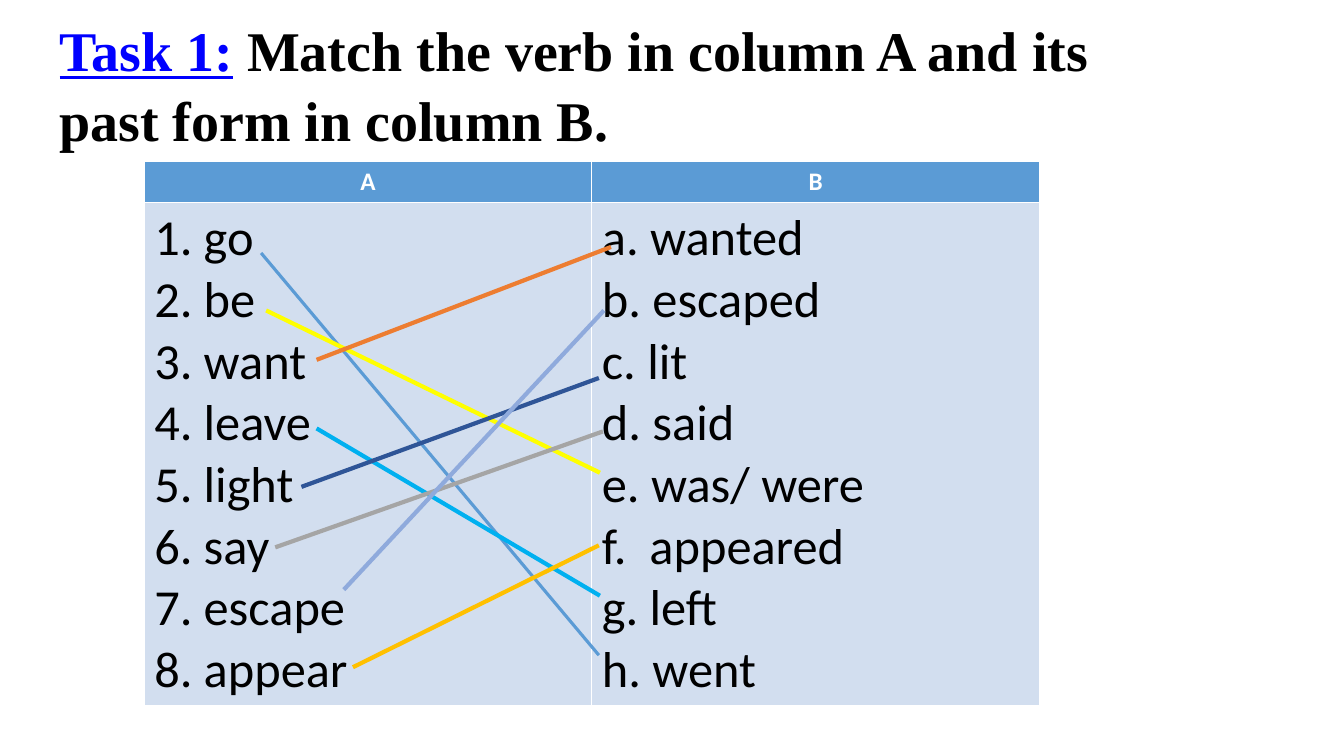
import pptx
import pptx.util
import pptx.dml.color
import pptx.enum.shapes
import pptx.enum.text
import pptx.oxml
import pptx.oxml.ns

SCALE = 9144  # EMU per px, at 100 px to the inch
HEAD, BODY = 41, 490
VERBS = ["go", "be", "want", "leave", "light", "say", "escape", "appear"]
PASTS = ["a. wanted", "b. escaped", "c. lit", "d. said", "e. was/ were",
         "f.  appeared", "g. left", "h. went"]
LINKS = [
    (259, 251, 594, 650, "5B9BD5", 2.25),
    (264, 308, 595, 469, "FFFF00", 3),
    (314, 357, 606, 245, "ED7D31", 3),
    (314, 425, 595, 591, "00B0F0", 3),
    (299, 483, 594, 375, "2F5597", 3),
    (273, 543, 598, 428, "A5A5A5", 3),
    (341, 585, 599, 308, "8FAADC", 3),
    (350, 662, 594, 541, "FFC000", 3),
]
TASK = {"name": "Times New Roman", "size": pptx.util.Pt(40), "bold": True}
LABEL = {"name": "Calibri", "size": pptx.util.Pt(18), "bold": True}
ENTRY = {"name": "Calibri", "size": pptx.util.Pt(36), "bold": False}


def px(count):
    return pptx.util.Emu(count * SCALE)


def tint(code):
    return pptx.dml.color.RGBColor.from_string(code)


def style(font, form, code):
    for key, value in form.items():
        setattr(font, key, value)
    font.color.rgb = tint(code)


def place(shape, left, top, width, height):
    box = {"left": left, "top": top, "width": width, "height": height}
    for key, value in box.items():
        setattr(shape, key, px(value))


def number(para, indent):
    """Give the paragraph an automatic number with a hanging indent."""
    props = para._p.get_or_add_pPr()
    props.set("marL", str(px(indent)))
    props.set("indent", str(-px(indent)))
    mark = pptx.oxml.parse_xml(
        '<a:buAutoNum %s type="arabicPeriod"/>' % pptx.oxml.ns.nsdecls("a"))
    props.append(mark)


def add_title(slide):
    title = slide.shapes.title
    place(title, 49, 7, 1100, 145)
    frame = title.text_frame
    frame.word_wrap = True
    frame.vertical_anchor = pptx.enum.text.MSO_ANCHOR.TOP
    para = frame.paragraphs[0]
    para.alignment = pptx.enum.text.PP_ALIGN.LEFT
    para.line_spacing = 1.05
    parts = [("Task 1:", "0000FF", True),
             (" Match the verb in column A and its past form in column B.",
              "000000", False)]
    for text, code, under in parts:
        run = para.add_run()
        run.text = text
        style(run.font, {**TASK, "underline": under}, code)


def fill_cell(cell, lines, back, form, code, align=None, indent=0):
    cell.fill.solid()
    cell.fill.fore_color.rgb = tint(back)
    cell.text = "\n".join(lines)
    for para in cell.text_frame.paragraphs:
        para.alignment = align
        if indent:
            number(para, indent)
        style(para.runs[0].font, form, code)


def add_grid(slide):
    frame = slide.shapes.add_table(
        2, 2, px(143), px(160), px(888), px(HEAD + BODY))
    grid = frame.table
    grid.horz_banding = False
    for row, height in zip(grid.rows, (HEAD, BODY)):
        row.height = px(height)
    center = pptx.enum.text.PP_ALIGN.CENTER
    columns = [("A", VERBS, 49), ("B", PASTS, 0)]
    for col, (label, words, indent) in enumerate(columns):
        fill_cell(grid.cell(0, col), [label], "5B9BD5", LABEL, "FFFFFF",
                  align=center)
        fill_cell(grid.cell(1, col), words, "D2DEEF", ENTRY, "000000",
                  indent=indent)


def add_link(slide, x1, y1, x2, y2, code, width):
    link = slide.shapes.add_connector(
        pptx.enum.shapes.MSO_CONNECTOR.STRAIGHT,
        px(x1), px(y1), px(x2), px(y2))
    link.line.color.rgb = tint(code)
    link.line.width = pptx.util.Pt(width)
    link._element.spPr.append(pptx.oxml.parse_xml(
        "<a:effectLst %s/>" % pptx.oxml.ns.nsdecls("a")))


def main():
    deck = pptx.Presentation()
    deck.slide_width = px(1333)
    deck.slide_height = px(750)
    slide = deck.slides.add_slide(deck.slide_layouts.get_by_name("Title Only"))
    add_title(slide)
    add_grid(slide)
    for link in LINKS:
        add_link(slide, *link)
    deck.save("out.pptx")


if __name__ == "__main__":
    main()
